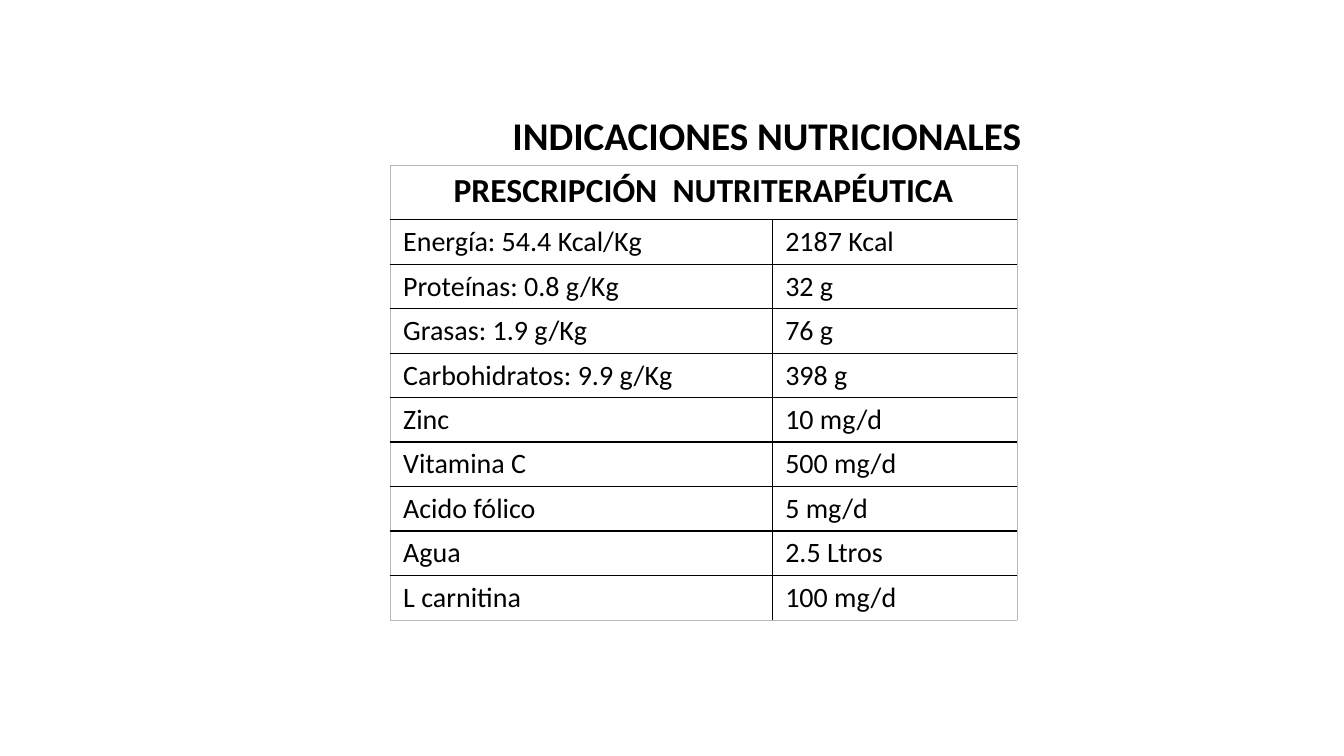
from lxml import etree
from pptx import Presentation
from pptx.dml.color import RGBColor
from pptx.enum.text import MSO_ANCHOR, PP_ALIGN
from pptx.oxml.ns import qn
from pptx.util import Cm, Pt

CENTER, LEFT = PP_ALIGN.CENTER, PP_ALIGN.LEFT
MIDDLE = MSO_ANCHOR.MIDDLE

TITLE = "INDICACIONES NUTRICIONALES"
HEADER = "PRESCRIPCIÓN  NUTRITERAPÉUTICA"
PRESCRIPTION = [
    ("Energía: 54.4 Kcal/Kg", "2187 Kcal"),
    ("Proteínas: 0.8 g/Kg", "32 g"),
    ("Grasas: 1.9 g/Kg", "76 g"),
    ("Carbohidratos: 9.9 g/Kg", "398 g"),
    ("Zinc", "10 mg/d"),
    ("Vitamina C", "500 mg/d"),
    ("Acido fólico", "5 mg/d"),
    ("Agua", "2.5 Ltros"),
    ("L carnitina", "100 mg/d"),
]
COLORS = {"text": "000000", "inner": "000000", "outer": "B8B8B8"}
FONT = "Calibri"
COL_WIDTHS = [9.63, 6.17]
HEADER_HEIGHT, ROW_HEIGHT = 1.37, 1.12


def write(tf, text, size, bold, align):
    p = tf.paragraphs[0]
    p.text = text
    p.alignment = align
    p.font.name = FONT
    p.font.size = Pt(size)
    p.font.bold = bold
    p.font.color.rgb = RGBColor.from_string(COLORS["text"])
    return p


def set_borders(cell, edges):
    tc_pr = cell._tc.get_or_add_tcPr()
    for side, is_outer in edges.items():
        width, color = (0.5, "outer") if is_outer else (1, "inner")
        ln = etree.SubElement(tc_pr, qn(f"a:ln{side}"), w=str(Pt(width)))
        fill = etree.SubElement(ln, qn("a:solidFill"))
        etree.SubElement(fill, qn("a:srgbClr"), val=COLORS[color])


def add_title(slide):
    sp = slide.shapes.add_textbox(Cm(9.37), Cm(2.44), Cm(19.91), Cm(2.06))
    tf = sp.text_frame
    tf.word_wrap = True
    tf.vertical_anchor = MIDDLE
    write(tf, TITLE, 28, True, CENTER).line_spacing = 0.9


def add_prescription(slide):
    rows = [(HEADER, "")] + PRESCRIPTION
    heights = [HEADER_HEIGHT] + [ROW_HEIGHT] * len(PRESCRIPTION)
    table = slide.shapes.add_table(
        len(rows), len(COL_WIDTHS), Cm(9.83), Cm(4.17),
        Cm(sum(COL_WIDTHS)), Cm(sum(heights))).table
    table.first_row = table.horz_banding = False
    for column, width in zip(table.columns, COL_WIDTHS):
        column.width = Cm(width)
    for row, height in zip(table.rows, heights):
        row.height = Cm(height)
    table.cell(0, 0).merge(table.cell(0, 1))

    last_row, last_col = len(rows) - 1, len(COL_WIDTHS) - 1
    for i, values in enumerate(rows):
        for j, value in enumerate(values):
            cell = table.cell(i, j)
            cell.margin_left = cell.margin_right = Cm(0.33)
            cell.margin_top = cell.margin_bottom = Cm(0.13)
            set_borders(cell, {
                "L": j == 0,
                "R": j == last_col or cell.is_merge_origin,
                "T": i == 0,
                "B": i == last_row,
            })
            cell.fill.background()
            if not cell.is_spanned:
                style = (24, True, CENTER) if i == 0 else (20, False, LEFT)
                write(cell.text_frame, value, *style)


def main():
    prs = Presentation()
    prs.slide_width, prs.slide_height = Cm(33.87), Cm(19.05)
    slide = prs.slides.add_slide(prs.slide_layouts[6])
    add_title(slide)
    add_prescription(slide)
    prs.save("out.pptx")


if __name__ == "__main__":
    main()
